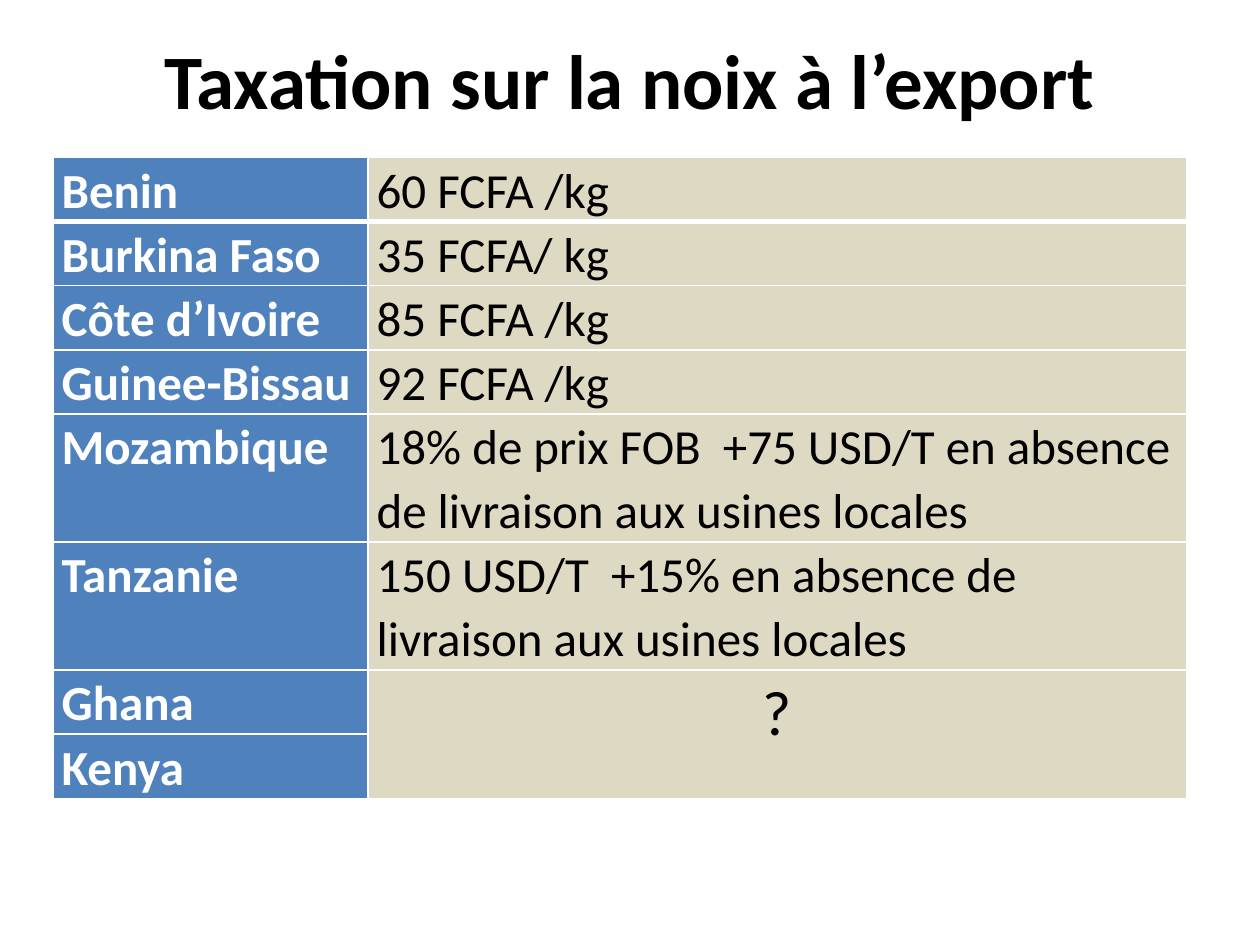
from dataclasses import dataclass

from lxml.etree import SubElement
from pptx import Presentation
from pptx.dml.color import RGBColor
from pptx.enum.text import MSO_ANCHOR, PP_ALIGN
from pptx.oxml.ns import qn
from pptx.util import Pt


@dataclass(frozen=True)
class Theme:
    font: str = "Calibri"
    black: str = "000000"
    white: str = "FFFFFF"
    blue: str = "4F81BD"
    beige: str = "DDD9C3"
    title_size: int = 44
    cell_size: int = 28
    mark_size: int = 36


theme = Theme()


def set_font(p, size, color, bold):
    p.font.name = theme.font
    p.font.size = Pt(size)
    p.font.bold = bold
    p.font.color.rgb = RGBColor.from_string(color)


def set_borders(cell, widths):
    tcPr = cell._tc.get_or_add_tcPr()
    for side, width in widths.items():
        ln = SubElement(tcPr, qn(f"a:ln{side}"), w=str(Pt(width)))
        fill = SubElement(ln, qn("a:solidFill"))
        SubElement(fill, qn("a:srgbClr"), val=theme.white)


prs = Presentation()
prs.slide_width, prs.slide_height = Pt(720), Pt(540)
s = prs.slides.add_slide(prs.slide_layouts[5])

title = s.shapes.title
title.left, title.top, title.width, title.height = Pt(36), Pt(0), Pt(648), Pt(90)
tf = title.text_frame
tf.text = "Taxation sur la noix à l’export"
tf.vertical_anchor = MSO_ANCHOR.MIDDLE
p = tf.paragraphs[0]
p.alignment = PP_ALIGN.CENTER
set_font(p, theme.title_size, theme.black, True)

taxes = [
    ("Benin", "60 FCFA /kg", 1),
    ("Burkina Faso", "35 FCFA/ kg", 1),
    ("Côte d’Ivoire", "85 FCFA /kg", 1),
    ("Guinee-Bissau", "92 FCFA /kg", 1),
    ("Mozambique", "18% de prix FOB  +75 USD/T en absence de livraison aux usines locales", 2),
    ("Tanzanie", "150 USD/T  +15% en absence de livraison aux usines locales", 2),
    ("Ghana", "?", 1),
    ("Kenya", "", 1),
]
line_height = 36.5
total_height = line_height * sum(lines for _, _, lines in taxes)
table = s.shapes.add_table(len(taxes), 2, Pt(30.24), Pt(90), Pt(648), Pt(total_height)).table
table.first_row = table.horz_banding = False
table.columns[0].width, table.columns[1].width = Pt(180), Pt(468)

for row, (country, tax, lines) in enumerate(taxes):
    table.rows[row].height = Pt(line_height * lines)
    for col, text in enumerate((country, tax)):
        cell = table.cell(row, col)
        cell.margin_left = cell.margin_right = Pt(5)
        cell.margin_top = cell.margin_bottom = Pt(0)
        set_borders(cell, {"L": 1, "R": 1, "T": 3 if row == 1 else 1, "B": 3 if row == 0 else 1})
        cell.fill.solid()
        cell.fill.fore_color.rgb = RGBColor.from_string((theme.blue, theme.beige)[col])
        cell.text = text
        p = cell.text_frame.paragraphs[0]
        p.line_spacing = 1.07
        p.alignment = PP_ALIGN.CENTER if text == "?" else PP_ALIGN.LEFT
        size = theme.mark_size if text == "?" else theme.cell_size
        set_font(p, size, (theme.white, theme.black)[col], col == 0)

table.cell(6, 1).merge(table.cell(7, 1))

prs.save("out.pptx")
